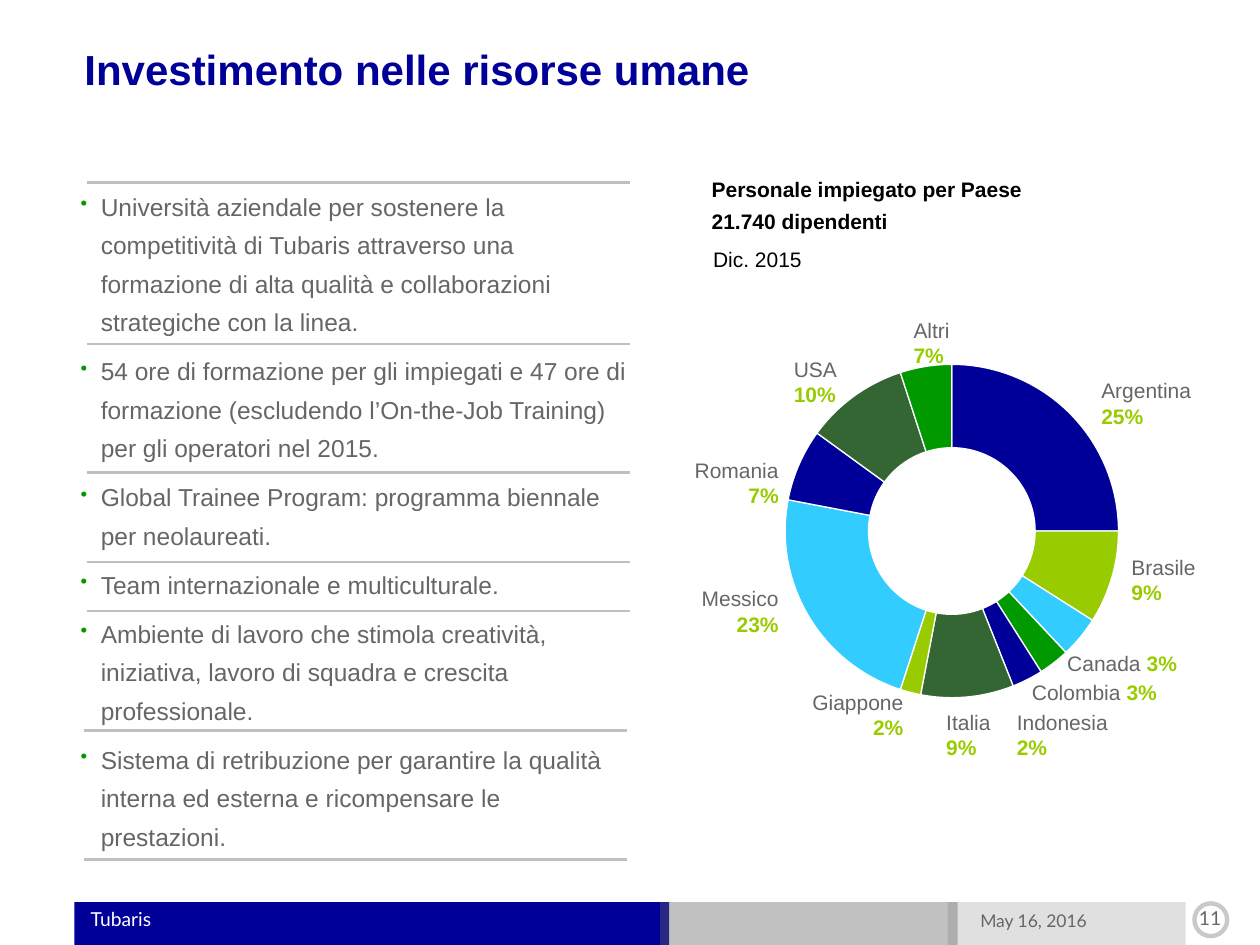
from dataclasses import dataclass

from lxml.etree import SubElement
from pptx import Presentation
from pptx.chart.data import CategoryChartData
from pptx.dml.color import RGBColor
from pptx.enum.chart import XL_CHART_TYPE
from pptx.enum.shapes import MSO_CONNECTOR, MSO_SHAPE
from pptx.enum.text import MSO_ANCHOR, PP_ALIGN
from pptx.oxml import parse_xml
from pptx.oxml.ns import nsdecls, qn
from pptx.util import Inches, Pt


@dataclass(frozen=True)
class Theme:
    navy: str = "000099"
    lime: str = "99CC00"
    sky: str = "33CCFF"
    green: str = "009900"
    forest: str = "336633"
    gray: str = "666666"
    rule: str = "BFBFBF"
    black: str = "000000"
    white: str = "FFFFFF"
    font: str = "Arial"
    footer_font: str = "Lato"
    title_size: int = 24
    body_size: int = 14
    label_size: int = 12
    footer_size: int = 11
    date_size: int = 10


THEME = Theme()

BULLETS = [
    "Università aziendale per sostenere la competitività di Tubaris attraverso una "
    "formazione di alta qualità e collaborazioni strategiche con la linea.",
    "54 ore di formazione per gli impiegati e 47 ore di formazione (escludendo "
    "l’On-the-Job Training) per gli operatori nel 2015.",
    "Global Trainee Program: programma biennale per neolaureati.",
    "Team internazionale e multiculturale.",
    "Ambiente di lavoro che stimola creatività, iniziativa, lavoro di squadra e "
    "crescita professionale.",
    "Sistema di retribuzione per garantire la qualità interna ed esterna e "
    "ricompensare le prestazioni.",
]

RULES = [(0.69, 1.45), (0.69, 2.73), (0.69, 3.75), (0.69, 4.46),
         (0.69, 4.85), (0.67, 5.8), (0.67, 6.82)]
RULE_LENGTH = 4.31

STAFF = [
    ("Argentina", 25, THEME.navy),
    ("Brasile", 9, THEME.lime),
    ("Canada", 4, THEME.sky),
    ("Colombia", 3, THEME.green),
    ("Indonesia", 3, THEME.navy),
    ("Italia", 9, THEME.forest),
    ("Giappone", 2, THEME.lime),
    ("Messico", 23, THEME.sky),
    ("Romania", 7, THEME.navy),
    ("USA", 10, THEME.forest),
    ("Altri", 5, THEME.green),
]

STACKED_LABELS = [
    ("Argentina", "25%", 8.74, 3, 1.22, PP_ALIGN.LEFT),
    ("Brasile", "9%", 8.98, 4.4, 1.22, PP_ALIGN.LEFT),
    ("Indonesia", "2%", 8.07, 5.63, 1.22, PP_ALIGN.LEFT),
    ("Italia", "9%", 7.51, 5.63, 0.45, PP_ALIGN.LEFT),
    ("Giappone", "2%", 6.26, 5.47, 0.91, PP_ALIGN.RIGHT),
    ("Messico", "23%", 4.96, 4.65, 1.22, PP_ALIGN.RIGHT),
    ("Romania", "7%", 4.96, 3.63, 1.22, PP_ALIGN.RIGHT),
    ("USA", "10%", 6.3, 2.83, 1.22, PP_ALIGN.LEFT),
    ("Altri", "7%", 7.25, 2.52, 1.22, PP_ALIGN.LEFT),
]
INLINE_LABELS = [("Canada ", "3%", 8.47, 5.16), ("Colombia ", "3%", 8.19, 5.39)]


def color(value):
    return RGBColor.from_string(value)


def set_alpha(fill_parent, percent):
    solid_color = next(fill_parent.iter(qn("a:srgbClr")))
    SubElement(solid_color, qn("a:alpha")).set("val", str(percent * 1000))


def add_run(paragraph, text, size, text_color, bold=False, font=THEME.font):
    run = paragraph.add_run()
    run.text = text
    run.font.name = font
    run.font.size = Pt(size)
    run.font.bold = bold
    run.font.color.rgb = color(text_color)


def prepare_frame(frame, insets=(0, 0, 0, 0), anchor=MSO_ANCHOR.TOP):
    frame.word_wrap = True
    frame.vertical_anchor = anchor
    (frame.margin_left, frame.margin_top,
     frame.margin_right, frame.margin_bottom) = map(Inches, insets)


def add_text(slide, box, paragraphs, align=PP_ALIGN.LEFT, line_spacing=None, **frame_options):
    frame = slide.shapes.add_textbox(*map(Inches, box)).text_frame
    prepare_frame(frame, **frame_options)
    for index, runs in enumerate(paragraphs):
        paragraph = frame.add_paragraph() if index else frame.paragraphs[0]
        paragraph.alignment = align
        paragraph.line_spacing = line_spacing
        for run in runs:
            add_run(paragraph, *run)


def add_bar(slide, left, width, fill, opacity):
    bar = slide.shapes.add_shape(
        MSO_SHAPE.RECTANGLE, Inches(left), Inches(7.16), Inches(width), Inches(0.35))
    bar.shadow.inherit = False
    bar.fill.solid()
    bar.fill.fore_color.rgb = color(fill)
    bar.line.fill.background()
    set_alpha(bar.fill._xPr, opacity)


def add_footer(slide):
    add_bar(slide, 0.59, 4.72, THEME.navy, 100)
    add_bar(slide, 5.24, 2.36, THEME.gray, 40)
    add_bar(slide, 7.52, 1.89, THEME.gray, 20)
    for text, box, size, text_color, align, spacing in [
        ("Tubaris", (0.72, 7.22, 4.44, 0.17), THEME.footer_size, THEME.white, PP_ALIGN.LEFT, 0.9),
        ("11", (9.39, 7.19, 0.43, 0.19), THEME.footer_size, THEME.gray, PP_ALIGN.CENTER, None),
        ("May 16, 2016", (7.78, 7.24, 1.55, 0.19), THEME.date_size, THEME.gray, PP_ALIGN.LEFT, 0.9),
    ]:
        add_text(slide, box, [[(text, size, text_color, False, THEME.footer_font)]], align, spacing)
    ring = slide.shapes.add_shape(
        MSO_SHAPE.OVAL, Inches(9.48), Inches(7.17), Inches(0.26), Inches(0.26))
    ring.shadow.inherit = False
    ring.fill.background()
    ring.line.width = Pt(2.5)
    ring.line.color.rgb = color(THEME.gray)
    set_alpha(ring.line._ln, 35)


def add_title(slide, text):
    title = slide.shapes.title
    title.left, title.top, title.width, title.height = map(Inches, (0.67, 0.39, 9.37, 0.37))
    prepare_frame(title.text_frame)
    paragraph = title.text_frame.paragraphs[0]
    paragraph.alignment = PP_ALIGN.LEFT
    paragraph.line_spacing = 0.9
    add_run(paragraph, text, THEME.title_size, THEME.navy, True)


def add_bullets(slide):
    frame = slide.shapes.add_textbox(*map(Inches, (0.64, 1.45, 4.36, 1.97))).text_frame
    prepare_frame(frame)
    for index, text in enumerate(BULLETS):
        paragraph = frame.add_paragraph() if index else frame.paragraphs[0]
        paragraph.line_spacing = Pt(22)
        paragraph.space_before = Pt(6 if index else 0)
        properties = paragraph._p.get_or_add_pPr()
        properties.set("marL", str(Inches(0.16)))
        properties.set("indent", str(-Inches(0.16)))
        bullet_color = SubElement(properties, qn("a:buClr"))
        SubElement(bullet_color, qn("a:srgbClr")).set("val", THEME.green)
        SubElement(properties, qn("a:buSzPct")).set("val", "80000")
        SubElement(properties, qn("a:buChar")).set("char", "•")
        add_run(paragraph, text, THEME.body_size, THEME.gray)


def add_rule(slide, left, top):
    rule = slide.shapes.add_connector(
        MSO_CONNECTOR.STRAIGHT, Inches(left), Inches(top), Inches(left + RULE_LENGTH), Inches(top))
    rule.line.color.rgb = color(THEME.rule)
    rule.line.width = Pt(1.5)
    SubElement(rule._element.spPr, qn("a:effectLst"))


def add_staff_chart(slide):
    data = CategoryChartData()
    data.categories = [country for country, _, _ in STAFF]
    data.add_series("Series 1", [share for _, share, _ in STAFF])
    chart = slide.shapes.add_chart(
        XL_CHART_TYPE.DOUGHNUT, *map(Inches, (5.35, 2.76, 4.41, 2.94)), data).chart
    chart.has_legend = False
    chart.has_title = False
    chart.font.name = "DejaVu Sans"
    chart.font.size = Pt(18)
    chart.font.color.rgb = color(THEME.black)
    plot = chart.plots[0]
    plot.vary_by_categories = True
    plot._element.find(qn("c:holeSize")).set("val", "50")
    for index, (_, _, fill) in enumerate(STAFF):
        slice_format = plot.series[0].points[index].format
        slice_format.fill.solid()
        slice_format.fill.fore_color.rgb = color(fill)
        slice_format.line.color.rgb = color(THEME.white)
        slice_format.line.width = Pt(0.75)
    plot_area = chart._chartSpace.chart.plotArea
    for layout in plot_area.findall(qn("c:layout")):
        plot_area.remove(layout)
    plot_area.insert(0, parse_xml(
        f'<c:layout {nsdecls("c")}><c:manualLayout><c:layoutTarget val="inner"/>'
        '<c:xMode val="edge"/><c:yMode val="edge"/><c:x val="0.2"/><c:y val="0.04"/>'
        '<c:w val="0.6"/><c:h val="0.91"/></c:manualLayout></c:layout>'))


def add_staff_labels(slide):
    size = THEME.label_size
    for country, share, left, top, width, align in STACKED_LABELS:
        add_text(slide, (left, top, width, 0.4),
                 [[(country, size, THEME.gray)], [(share, size, THEME.lime, True)]], align)
    for country, share, left, top in INLINE_LABELS:
        add_text(slide, (left, top, 1.22, 0.2),
                 [[(country, size, THEME.gray), (share, size, THEME.lime, True)]])


def main():
    presentation = Presentation()
    presentation.slide_width, presentation.slide_height = Inches(10), Inches(7.5)
    slide = presentation.slides.add_slide(presentation.slide_layouts[5])
    add_footer(slide)
    add_title(slide, "Investimento nelle risorse umane")
    add_bullets(slide)
    for left, top in RULES:
        add_rule(slide, left, top)
    headings = ["Personale impiegato per Paese", "21.740 dipendenti"]
    add_text(slide, (5.55, 1.37, 3.72, 0.47),
             [[(text, THEME.label_size, THEME.black, True)] for text in headings],
             line_spacing=Pt(18), insets=(0.1, 0.05, 0.1, 0.05), anchor=MSO_ANCHOR.MIDDLE)
    add_text(slide, (5.63, 1.94, 2.83, 0.31),
             [[("Dic. 2015", THEME.label_size, THEME.black)]], insets=(0.03, 0.02, 0, 0))
    add_staff_chart(slide)
    add_staff_labels(slide)
    presentation.save("out.pptx")


if __name__ == "__main__":
    main()
